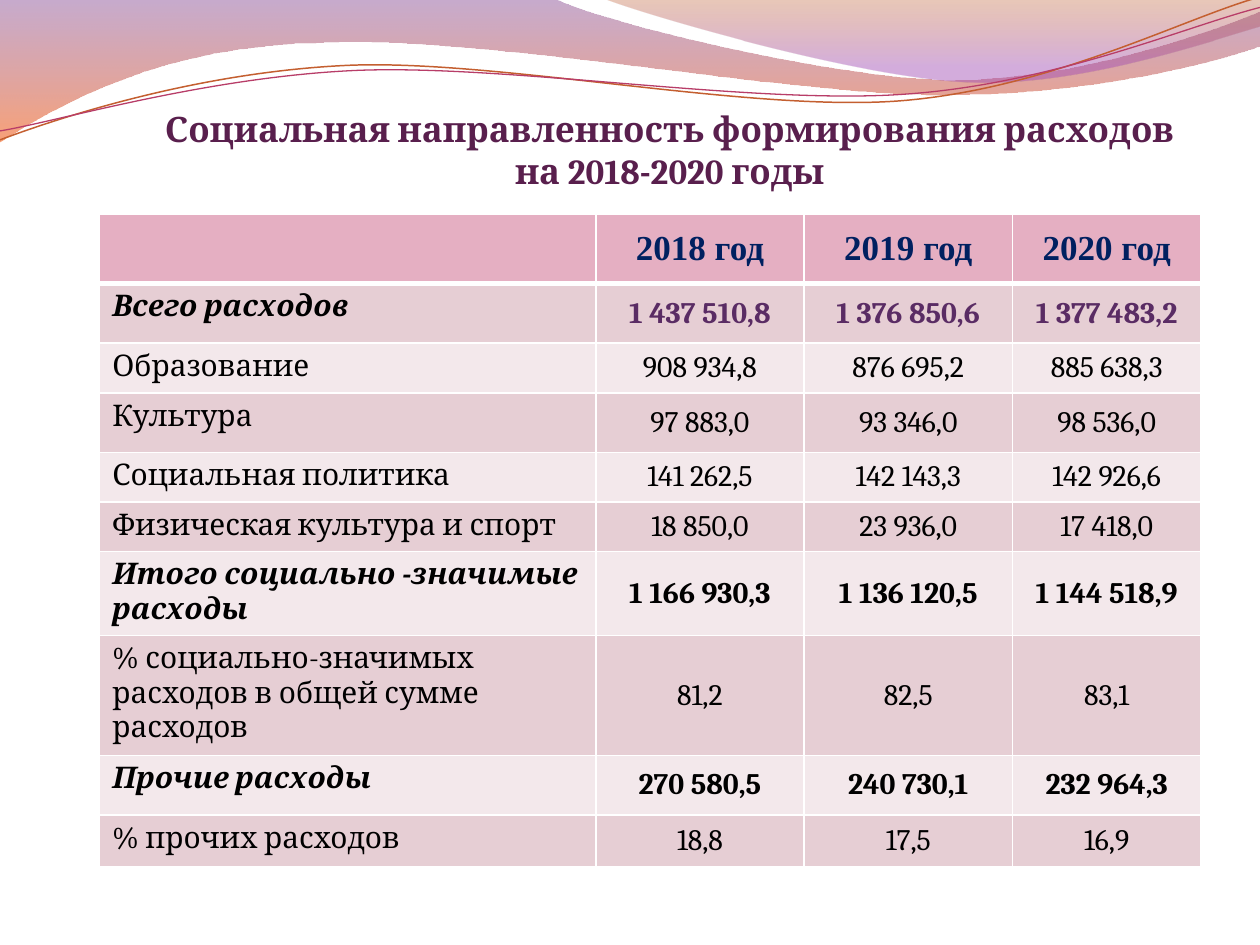
import lxml.etree
import pptx
import pptx.dml.color
import pptx.enum.text
import pptx.oxml.ns
import pptx.util
from pptx.util import Cm

RGBColor = pptx.dml.color.RGBColor
qn = pptx.oxml.ns.qn
PLUM = RGBColor(0x59, 0x1F, 0x4D)
NAVY = RGBColor(0x00, 0x20, 0x60)
VIOLET = RGBColor(0x5A, 0x2C, 0x64)
BLACK = RGBColor(0x00, 0x00, 0x00)
WHITE = RGBColor(0xFF, 0xFF, 0xFF)
HEADER_PINK = RGBColor(0xE5, 0xAF, 0xC2)
DARK_BAND = RGBColor(0xE6, 0xCE, 0xD4)
LIGHT_BAND = RGBColor(0xF3, 0xE8, 0xEB)
WAVE_PURPLE = RGBColor(0x83, 0x45, 0x91)
WAVE_ORANGE = RGBColor(0xF3, 0x53, 0x07)
WAVE_BROWN = RGBColor(0xB7, 0x49, 0x15)
WAVE_LILAC = RGBColor(0xA1, 0x4B, 0xB4)
LINE_ORANGE = RGBColor(0xC4, 0x5F, 0x30)
LINE_PINK = RGBColor(0xB8, 0x3D, 0x68)


def add_curve(shapes, start, segments, closed):
    """Draw a path in cm; a segment is one line end or three cubic Bezier points."""
    builder = shapes.build_freeform(Cm(start[0]), Cm(start[1]))
    builder.add_line_segments(
        [(Cm(segment[-1][0]), Cm(segment[-1][1])) for segment in segments], close=closed
    )
    shape = builder.convert_to_shape()
    shape.shadow.inherit = False
    for line_element, segment in zip(list(shape._element.iter(qn("a:lnTo"))), segments):
        if len(segment) == 3:
            curve_element = lxml.etree.Element(qn("a:cubicBezTo"))
            for x, y in segment:
                point = lxml.etree.SubElement(curve_element, qn("a:pt"))
                point.set("x", str(Cm(x) - shape.left))
                point.set("y", str(Cm(y) - shape.top))
            line_element.getparent().replace(line_element, curve_element)
    return shape


def format_text(paragraph, font_name, size, color, bold, italic=False):
    for run in paragraph.runs:
        run.font.name = font_name
        run.font.size = pptx.util.Pt(size)
        run.font.color.rgb = color
        run.font.bold = bold
        run.font.italic = italic


presentation = pptx.Presentation()
presentation.slide_width = Cm(25.4)
presentation.slide_height = Cm(19.05)
slide = presentation.slides.add_slide(presentation.slide_layouts[6])

# Waves: start, segments, gradient stops (position, colour, opacity in percent)
waves = [
    ((0, -0.03), [
        [(11.18, -0.03)],
        [(12.09, 0.43), (16.87, 1.6), (19.25, 1.6)],
        [(21.67, 1.6), (24.33, 0.66), (25.4, 0.23)],
        [(25.43, 0.91)],
        [(24.97, 1.12), (22.1, 1.93), (18.95, 1.91)],
        [(15.8, 1.91), (9.7, 0.71), (6.53, 0.86)],
        [(3.28, 0.89), (1.17, 2.11), (-0.03, 2.87)],
    ], [(0, WAVE_PURPLE, 45), (1, WAVE_ORANGE, 55)]),
    ((12.17, -0.03), [
        [(12.93, 0.28), (17.32, 1.57), (19.53, 1.65)],
        [(21.74, 1.75), (24.41, 0.81), (25.4, 0.53)],
        [(25.4, 0)],
    ], [(0, WAVE_BROWN, 30), (0.8, WAVE_LILAC, 45)]),
]
for start, segments, stops in waves:
    wave = add_curve(slide.shapes, start, segments, closed=True)
    wave.line.fill.background()
    wave.fill.gradient()
    wave.fill.gradient_angle = 270
    for gradient_stop, (position, color, opacity) in zip(wave.fill.gradient_stops, stops):
        gradient_stop.position = position
        gradient_stop.color.rgb = color
    color_elements = wave._element.spPr.iter(qn("a:srgbClr"))
    for color_element, (position, color, opacity) in zip(color_elements, stops):
        alpha = lxml.etree.SubElement(color_element, qn("a:alpha"))
        alpha.set("val", str(opacity * 1000))

wave_lines = [
    ((-0.05, 2.22), [
        [(1.19, 1.82), (4.01, 1.04), (7.05, 1.05)],
        [(10.05, 1.07), (15.02, 2.37), (18.08, 2.29)],
        [(21.13, 2.2), (23.86, 0.91), (25.41, 0.55)],
    ], LINE_ORANGE, 0.85),
    ((-0.04, 2.04), [
        [(1.16, 1.9), (4.17, 1.15), (7.2, 1.16)],
        [(10.25, 1.18), (15.13, 2.23), (18.19, 2.16)],
        [(21.22, 2.1), (23.93, 1.06), (25.45, 0.75)],
    ], LINE_PINK, 0.75),
]
for start, segments, color, width in wave_lines:
    wave_line = add_curve(slide.shapes, start, segments, closed=False)
    wave_line.rotation = 357.3
    wave_line.fill.background()
    wave_line.line.color.rgb = color
    wave_line.line.width = pptx.util.Pt(width)

title = slide.shapes.add_textbox(Cm(2.69), Cm(1.24), Cm(21.62), Cm(2.74))
title.text_frame.word_wrap = True
title.text_frame.vertical_anchor = pptx.enum.text.MSO_ANCHOR.BOTTOM
title.text_frame.text = "Социальная направленность формирования расходов\nна 2018-2020 годы"
for paragraph in title.text_frame.paragraphs:
    paragraph.alignment = pptx.enum.text.PP_ALIGN.CENTER
    format_text(paragraph, "Cambria", 20, PLUM, bold=True)

expenses = [
    ("", "2018 год", "2019 год", "2020 год"),
    ("Всего расходов", "1 437 510,8", "1 376 850,6", "1 377 483,2"),
    ("Образование", "908 934,8", "876 695,2", "885 638,3"),
    ("Культура", "97 883,0", "93 346,0", "98 536,0"),
    ("Социальная политика", "141 262,5", "142 143,3", "142 926,6"),
    ("Физическая культура и спорт", "18 850,0", "23 936,0", "17 418,0"),
    ("Итого социально -значимые расходы", "1 166 930,3", "1 136 120,5", "1 144 518,9"),
    ("% социально-значимых расходов в общей сумме расходов", "81,2", "82,5", "83,1"),
    ("Прочие расходы", "270 580,5", "240 730,1", "232 964,3"),
    ("% прочих расходов", "18,8", "17,5", "16,9"),
]
TOTAL_ROWS = (1, 6, 8)
column_widths = [10, 4.2, 4.2, 3.8]
row_heights = [1.4, 1.2, 1, 1.2, 1, 1, 1.6, 1.9, 1.2, 1.05]

table = slide.shapes.add_table(
    len(expenses), len(column_widths),
    Cm(2.01), Cm(4.32), Cm(sum(column_widths)), Cm(sum(row_heights)),
).table
for column, width in zip(table.columns, column_widths):
    column.width = Cm(width)
for row, height in zip(table.rows, row_heights):
    row.height = Cm(height)

for row_index, values in enumerate(expenses):
    is_total = row_index in TOTAL_ROWS
    for column_index, value in enumerate(values):
        cell = table.cell(row_index, column_index)
        cell.fill.solid()
        if row_index == 0:
            cell.fill.fore_color.rgb = HEADER_PINK
        else:
            cell.fill.fore_color.rgb = DARK_BAND if row_index % 2 else LIGHT_BAND
        cell.text_frame.text = value
        paragraph = cell.text_frame.paragraphs[0]
        if column_index > 0:
            paragraph.alignment = pptx.enum.text.PP_ALIGN.CENTER
            cell.vertical_anchor = pptx.enum.text.MSO_ANCHOR.MIDDLE
        if row_index == 0:
            format_text(paragraph, "Times New Roman", 20, NAVY, bold=True)
        else:
            color = VIOLET if row_index == 1 and column_index > 0 else BLACK
            format_text(paragraph, "Cambria", 17, color, bold=is_total,
                        italic=is_total and column_index == 0)

        cell_properties = cell._tc.get_or_add_tcPr()
        for border_index, side in enumerate(("lnL", "lnR", "lnT", "lnB")):
            is_header_rule = (row_index, side) in ((0, "lnB"), (1, "lnT"))
            border = lxml.etree.Element(qn("a:" + side))
            border.set("w", str(pptx.util.Pt(3 if is_header_rule else 1)))
            border_fill = lxml.etree.SubElement(border, qn("a:solidFill"))
            lxml.etree.SubElement(border_fill, qn("a:srgbClr")).set("val", str(WHITE))
            cell_properties.insert(border_index, border)

presentation.save("out.pptx")
